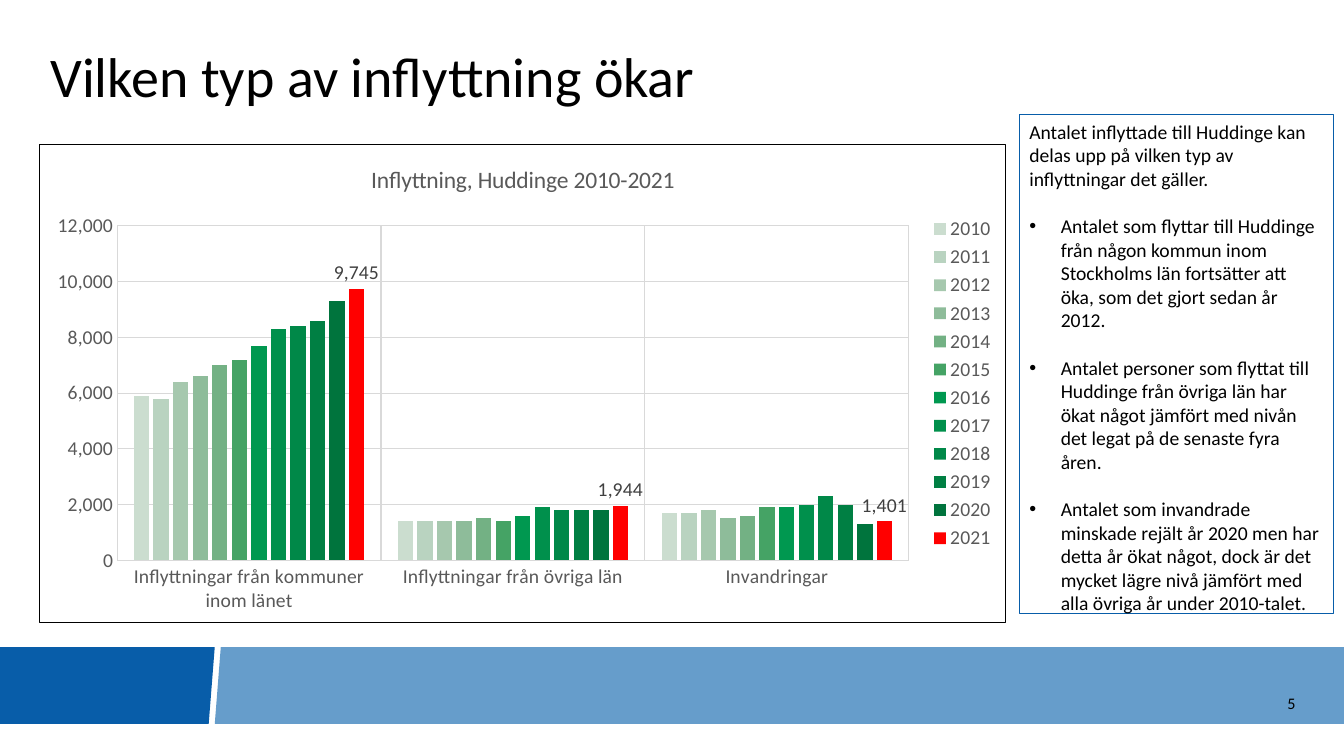
from lxml import etree
from pptx import Presentation
from pptx.chart import data as chart_data
from pptx.dml.color import RGBColor
from pptx.enum import chart as chart_enum, text
from pptx.oxml import ns, parse_xml
from pptx.util import Pt

BLACK = RGBColor(0x00, 0x00, 0x00)
DARK_BLUE = RGBColor(0x08, 0x5D, 0xA9)
LIGHT_BLUE = RGBColor(0x66, 0x9D, 0xCB)
AXIS_GREY = RGBColor(0x59, 0x59, 0x59)
LABEL_GREY = RGBColor(0x40, 0x40, 0x40)
GRID_GREY = RGBColor(0xD9, 0xD9, 0xD9)
RED = RGBColor(0xFF, 0x00, 0x00)
GREENS = [RGBColor.from_string(code) for code in (
    "CBDDCF", "B9D3C0", "A6C8AE", "8EBC9A", "73B184", "45A365",
    "009850", "00904C", "008848", "007F43", "00743D")]

FONT = "Calibri"
SLIDE_WIDTH, SLIDE_HEIGHT = 960, 540
FIRST_YEAR = 2010
MOVES = {
    "Inflyttningar från kommuner inom länet":
        (5900, 5800, 6400, 6600, 7000, 7200, 7700, 8300, 8400, 8600, 9300, 9745),
    "Inflyttningar från övriga län":
        (1400, 1400, 1400, 1400, 1500, 1400, 1600, 1900, 1800, 1800, 1800, 1944),
    "Invandringar":
        (1700, 1700, 1800, 1500, 1600, 1900, 1900, 2000, 2300, 2000, 1300, 1401),
}
INTRO = "Antalet inflyttade till Huddinge kan delas upp på vilken typ av inflyttningar det gäller."
FINDINGS = (
    "Antalet som flyttar till Huddinge från någon kommun inom Stockholms län "
    "fortsätter att öka, som det gjort sedan år 2012.",
    "Antalet personer som flyttat till Huddinge från övriga län har ökat något "
    "jämfört med nivån det legat på de senaste fyra åren.",
    "Antalet som invandrade minskade rejält år 2020 men har detta år ökat något, "
    "dock är det mycket lägre nivå jämfört med alla övriga år under 2010-talet.",
)


def style_font(font, size, color):
    font.name = FONT
    font.size = Pt(size)
    font.color.rgb = color


def place(shape, box):
    shape.left, shape.top, shape.width, shape.height = map(Pt, box)


def add_title(slide, box):
    title = slide.shapes.title
    place(title, box)
    frame = title.text_frame
    frame.text = "Vilken typ av inflyttning ökar"
    frame.vertical_anchor = text.MSO_ANCHOR.MIDDLE
    paragraph = frame.paragraphs[0]
    paragraph.alignment = text.PP_ALIGN.LEFT
    paragraph.line_spacing = 0.9
    style_font(paragraph.runs[0].font, 40, BLACK)


def add_findings(slide, box):
    panel = slide.placeholders[1]
    place(panel, box)
    panel.line.color.rgb = DARK_BLUE
    panel.line.width = Pt(0.75)
    frame = panel.text_frame
    frame.text = "\n".join((INTRO, *FINDINGS))
    frame.word_wrap = True
    frame.auto_size = text.MSO_AUTO_SIZE.SHAPE_TO_FIT_TEXT
    frame.vertical_anchor = text.MSO_ANCHOR.TOP
    for index, paragraph in enumerate(frame.paragraphs):
        properties = paragraph._p.get_or_add_pPr()
        indent = Pt(22.5) if index else 0
        properties.set("marL", str(indent))
        properties.set("indent", str(-indent))
        if index:
            etree.SubElement(properties, ns.qn("a:buFont")).set("typeface", "Arial")
            etree.SubElement(properties, ns.qn("a:buChar")).set("char", "•")
        else:
            etree.SubElement(properties, ns.qn("a:buNone"))
        paragraph.space_before = Pt(17 if index else 0)
        paragraph.alignment = text.PP_ALIGN.LEFT
        style_font(paragraph.runs[0].font, 14, BLACK)


def style_axis(axis):
    axis.major_tick_mark = axis.minor_tick_mark = chart_enum.XL_TICK_MARK.NONE
    style_font(axis.tick_labels.font, 14, AXIS_GREY)
    axis.has_major_gridlines = True
    grid = axis.major_gridlines.format.line
    grid.color.rgb = GRID_GREY
    grid.width = Pt(0.75)


def frame_chart(chart):
    border = parse_xml(
        f'<c:spPr {ns.nsdecls("c", "a")}><a:noFill/><a:ln w="{Pt(0.75)}">'
        f'<a:solidFill><a:srgbClr val="{BLACK}"/></a:solidFill></a:ln></c:spPr>')
    chart_element = chart._chartSpace.find(ns.qn("c:chart"))
    chart_element.addnext(border)
    plot_area = chart_element.find(ns.qn("c:plotArea"))
    for layout in plot_area.findall(ns.qn("c:layout")):
        plot_area.remove(layout)
    layout = etree.Element(ns.qn("c:layout"))
    manual = etree.SubElement(layout, ns.qn("c:manualLayout"))
    for tag, value in (("layoutTarget", "inner"), ("xMode", "edge"), ("yMode", "edge"),
                       ("x", "0.08"), ("y", "0.17"), ("w", "0.82"), ("h", "0.7")):
        etree.SubElement(manual, ns.qn(f"c:{tag}")).set("val", value)
    plot_area.insert(0, layout)


def add_moves_chart(slide, box):
    data = chart_data.CategoryChartData(number_format="#,##0")
    data.categories = list(MOVES)
    for offset, values in enumerate(zip(*MOVES.values())):
        data.add_series(str(FIRST_YEAR + offset), values)
    chart = slide.shapes.add_chart(
        chart_enum.XL_CHART_TYPE.COLUMN_CLUSTERED, *map(Pt, box), data).chart
    style_font(chart.font, 14, BLACK)
    chart.has_title = True
    title = chart.chart_title.text_frame
    title.text = "Inflyttning, Huddinge 2010-2021"
    style_font(title.paragraphs[0].runs[0].font, 16.8, AXIS_GREY)
    title.paragraphs[0].runs[0].font.bold = False
    chart.has_legend = True
    chart.legend.position = chart_enum.XL_LEGEND_POSITION.RIGHT
    chart.legend.include_in_layout = False
    style_font(chart.legend.font, 14, AXIS_GREY)

    style_axis(chart.category_axis)
    chart.category_axis.format.line.color.rgb = GRID_GREY
    chart.category_axis.format.line.width = Pt(0.75)
    value_axis = chart.value_axis
    style_axis(value_axis)
    value_axis.format.line.fill.background()
    value_axis.minimum_scale, value_axis.maximum_scale = 0, 12000
    value_axis.major_unit = 2000
    value_axis.tick_labels.number_format = "#,##0"
    value_axis.tick_labels.number_format_is_linked = False

    plot = chart.plots[0]
    plot.vary_by_categories = False
    plot.gap_width, plot.overlap = 219, -27
    for series, color in zip(plot.series, [*GREENS, RED]):
        series.format.fill.solid()
        series.format.fill.fore_color.rgb = color
    labels = plot.series[-1].data_labels
    labels.show_value = True
    labels.position = chart_enum.XL_LABEL_POSITION.OUTSIDE_END
    labels.number_format = "#,##0"
    labels.number_format_is_linked = False
    style_font(labels.font, 14, LABEL_GREY)
    frame_chart(chart)


def add_footer(slide, box):
    left, top, width, height = box
    right, bottom = left + width, top + height
    slant = 4.3
    dark_end, light_start = left + 153.4, left + 157.7
    bands = (
        (LIGHT_BLUE, ((light_start, top), (right, top), (right, bottom),
                      (light_start - slant, bottom))),
        (DARK_BLUE, ((left, top), (dark_end, top), (dark_end - slant, bottom),
                     (left, bottom))),
    )
    for color, corners in bands:
        start, *others = [(Pt(x), Pt(y)) for x, y in corners]
        builder = slide.shapes.build_freeform(*start)
        builder.add_line_segments(others, close=True)
        band = builder.convert_to_shape()
        band.shadow.inherit = False
        band.fill.solid()
        band.fill.fore_color.rgb = color
        band.line.fill.background()

    number = slide.shapes.add_textbox(
        Pt(right - 142), Pt(top + 25.2), Pt(114.5), Pt(28.8))
    frame = number.text_frame
    frame.word_wrap = True
    frame.vertical_anchor = text.MSO_ANCHOR.MIDDLE
    frame.text = "5"
    frame.paragraphs[0].alignment = text.PP_ALIGN.RIGHT
    style_font(frame.paragraphs[0].runs[0].font, 11.5, BLACK)


def main():
    presentation = Presentation()
    presentation.slide_width, presentation.slide_height = Pt(SLIDE_WIDTH), Pt(SLIDE_HEIGHT)
    slide = presentation.slides.add_slide(presentation.slide_layouts[1])
    add_footer(slide, (0, 462.3, SLIDE_WIDTH, 54.7))
    add_title(slide, (28.8, 28.1, 891.4, 57.6))
    add_findings(slide, (728, 82, 224.6, 363.6))
    add_moves_chart(slide, (28.1, 103, 690.5, 342))
    presentation.save("out.pptx")


if __name__ == "__main__":
    main()
